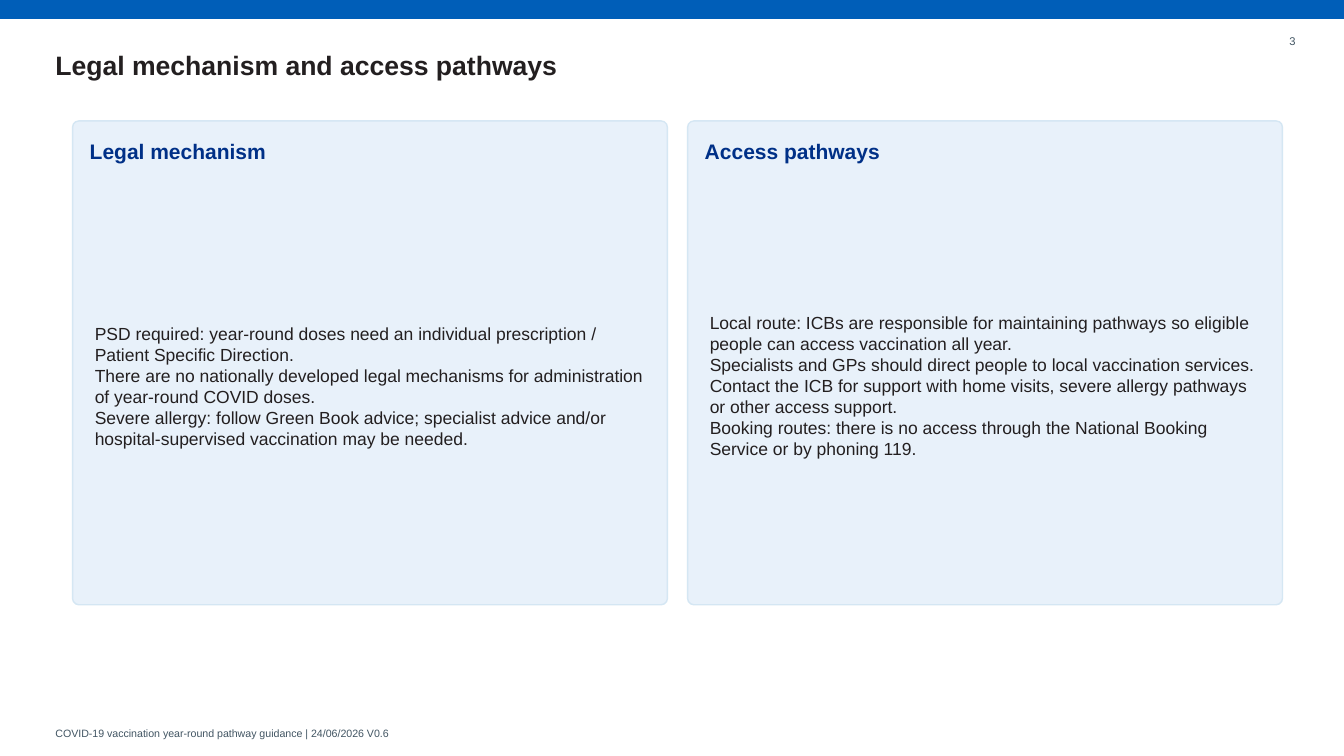
from lxml.etree import SubElement
from pptx import Presentation
from pptx.dml.color import RGBColor
from pptx.enum.shapes import MSO_SHAPE
from pptx.enum.text import MSO_ANCHOR, MSO_AUTO_SIZE, PP_ALIGN
from pptx.oxml.ns import qn
from pptx.util import Pt

COLORS = {
    "banner": "005EB8",
    "heading": "003087",
    "text": "231F20",
    "muted": "425563",
    "card": "E8F1FA",
    "card_line": "D2E5F3",
}
STYLES = {
    "title": {"size": 19, "color": "text", "bold": True},
    "heading": {"size": 15, "color": "heading", "bold": True},
    "body": {"size": 12.5, "color": "text", "bold": False},
    "number": {"size": 8, "color": "muted", "bold": False},
    "footer": {"size": 7.6, "color": "muted", "bold": False},
}
SLIDE_W, SLIDE_H = 959.76, 540
MARGIN = 39.6
CARD_LEFT, CARD_TOP, CARD_W, CARD_H = 51.84, 86.4, 424.8, 345.6
CARD_GAP = 14.4

CARDS = [
    ("Legal mechanism", [
        "PSD required: year-round doses need an individual prescription / Patient Specific Direction.",
        "There are no nationally developed legal mechanisms for administration of year-round COVID doses.",
        "Severe allergy: follow Green Book advice; specialist advice and/or hospital-supervised "
        "vaccination may be needed.",
    ]),
    ("Access pathways", [
        "Local route: ICBs are responsible for maintaining pathways so eligible people can access "
        "vaccination all year.",
        "Specialists and GPs should direct people to local vaccination services.",
        "Contact the ICB for support with home visits, severe allergy pathways or other access support.",
        "Booking routes: there is no access through the National Booking Service or by phoning 119.",
    ]),
]


def rgb(name):
    return RGBColor.from_string(COLORS[name])


def fill_text(sp, lines, style, align=PP_ALIGN.LEFT):
    """Write one paragraph per line, centred vertically with no insets."""
    tf = sp.text_frame
    frame = {
        "word_wrap": True, "auto_size": MSO_AUTO_SIZE.NONE,
        "vertical_anchor": MSO_ANCHOR.MIDDLE,
        "margin_left": 0, "margin_top": 0, "margin_right": 0, "margin_bottom": 0,
    }
    for name, value in frame.items():
        setattr(tf, name, value)
    look = STYLES[style]
    font = {"name": "Arial", "size": Pt(look["size"]), "bold": look["bold"]}
    for i, line in enumerate(lines):
        p = tf.add_paragraph() if i else tf.paragraphs[0]
        p.alignment = align
        r = p.add_run()
        r.text = line
        for name, value in font.items():
            setattr(r.font, name, value)
        r.font.color.rgb = rgb(look["color"])


def add_text(s, box, lines, style, align=PP_ALIGN.LEFT):
    sp = s.shapes.add_textbox(*map(Pt, box))
    fill_text(sp, lines, style, align)


def add_panel(s, kind, box, fill, line):
    sp = s.shapes.add_shape(kind, *map(Pt, box))
    sp.shadow.inherit = False
    sp.fill.solid()
    sp.fill.fore_color.rgb = rgb(fill)
    sp.line.color.rgb = rgb(line)
    sp.line.width = Pt(1)
    return sp


def add_header(s, title, number):
    add_panel(s, MSO_SHAPE.RECTANGLE, (0, 0, SLIDE_W, 12.96), "banner", "banner")
    sp = s.shapes.title
    place = {"left": MARGIN, "top": 30.24, "width": 835.2, "height": 32.4}
    for name, value in place.items():
        setattr(sp, name, Pt(value))
    fill_text(sp, [title], "title")
    add_text(s, (896.4, 20.16, 28.8, 18), [number], "number", PP_ALIGN.RIGHT)


def add_card(s, box, heading, lines):
    x, y, w, h = box
    sp = add_panel(s, MSO_SHAPE.ROUNDED_RECTANGLE, box, "card", "card_line")
    sp.adjustments[0] = 0.013
    line_color = sp.line._ln.find(".//" + qn("a:srgbClr"))
    SubElement(line_color, qn("a:alpha"), val="90000")
    add_text(s, (x + 12.24, y + 11.52, w - 24.48, 20.16), [heading], "heading")
    add_text(s, (x + 15.84, y + 39.6, w - 31.68, h - 46.8), lines, "body")


def add_footer(s, text):
    add_text(s, (MARGIN, 516.96, 684, 12.96), [text], "footer")


def main():
    prs = Presentation()
    prs.slide_width, prs.slide_height = Pt(SLIDE_W), Pt(SLIDE_H)
    s = prs.slides.add_slide(prs.slide_layouts[5])
    add_header(s, "Legal mechanism and access pathways", "3")
    for i, (heading, lines) in enumerate(CARDS):
        x = CARD_LEFT + i * (CARD_W + CARD_GAP)
        add_card(s, (x, CARD_TOP, CARD_W, CARD_H), heading, lines)
    add_footer(s, "COVID-19 vaccination year-round pathway guidance | 24/06/2026 V0.6")
    prs.save("out.pptx")


if __name__ == "__main__":
    main()
